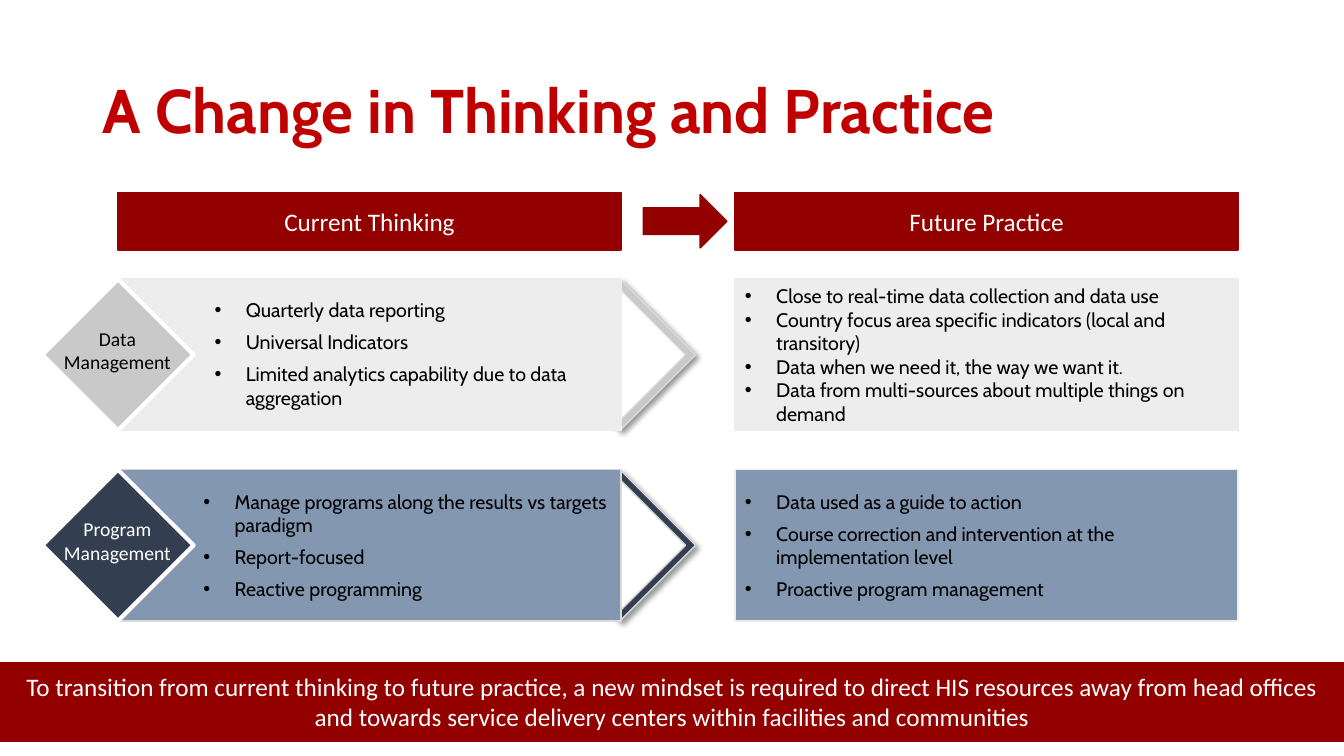
from lxml import etree
from pptx import Presentation
from pptx.dml.color import RGBColor
from pptx.enum.shapes import MSO_SHAPE as Kind
from pptx.enum.text import MSO_ANCHOR as Anchor, PP_ALIGN as Align
from pptx.oxml import parse_xml
from pptx.oxml.ns import nsdecls, qn
from pptx.util import Inches, Pt

RED = RGBColor(0xC0, 0x00, 0x00)
MAROON = RGBColor(0x92, 0x00, 0x00)
WHITE = RGBColor(0xFF, 0xFF, 0xFF)
BLACK = RGBColor(0x00, 0x00, 0x00)
PALE = RGBColor(0xED, 0xED, 0xED)
SILVER = RGBColor(0xC9, 0xC9, 0xC9)
EDGE = RGBColor(0xD9, 0xD9, 0xD9)
NAVY = RGBColor(0x33, 0x3F, 0x50)
STEEL = RGBColor(0x84, 0x97, 0xB0)

SHADOW = (f'<a:effectLst {nsdecls("a")}><a:outerShdw blurRad="{Pt(4)}" dist="{Pt(3)}" '
          'dir="2700000" algn="tl" rotWithShape="0"><a:srgbClr val="000000">'
          '<a:alpha val="40000"/></a:srgbClr></a:outerShdw></a:effectLst>')

# Grid: two columns and two rows of cards
LEFT, RIGHT, WIDE = 1.17, 7.29, 4.99
TOP, STEP, TALL = 2.77, 1.89, 1.5
HEAD, HEAD_H = 1.91, 0.57
TAG, TIP, INSET = LEFT - TALL / 2, 5.4, 0.1

deck = Presentation()
deck.slide_width, deck.slide_height = Inches(13.33), Inches(7.5)
slide = deck.slides.add_slide(deck.slide_layouts[5])


def draw(kind, box, fill, edge, weight=1):
    shape = slide.shapes.add_shape(kind, *map(Inches, box))
    shape.shadow.inherit = False
    shape.fill.solid()
    shape.fill.fore_color.rgb = fill
    shape.line.color.rgb = edge
    shape.line.width = Pt(weight)
    return shape


def write(shape, text, font, size, color, gap=None, wrap=True):
    """Centre the text, or set it as bullets when a gap is given."""
    frame = shape.text_frame
    frame.text = text
    frame.word_wrap = wrap
    for para in frame.paragraphs:
        para.font.name, para.font.size = font, Pt(size)
        para.font.color.rgb = color
        para.alignment = Align.CENTER if gap is None else Align.LEFT
        if gap is not None:
            para.space_before = Pt(gap)
            props = para._p.get_or_add_pPr()
            props.set("marL", str(Inches(0.31)))
            props.set("indent", str(Inches(-0.31)))
            mark = parse_xml(f'<a:buChar {nsdecls("a")} char="•"/>')
            face = parse_xml(f'<a:buFont {nsdecls("a")} typeface="Arial"/>')
            props.find(qn("a:defRPr")).addprevious(face)
            face.addnext(mark)
        for run in para.runs:
            run.font.name, run.font.size = font, Pt(size)
            run.font.color.rgb = color


# Title
title = slide.shapes.title
title.left, title.top, title.width, title.height = map(Inches, (0.92, 0.4, 11.5, 1.45))
write(title, "A Change in Thinking and Practice", "Cabin", 44, RED)
title.text_frame.vertical_anchor = Anchor.MIDDLE
para = title.text_frame.paragraphs[0]
para.alignment, para.line_spacing = Align.LEFT, 0.9
para.runs[0].font.bold = True

# Column heads, arrow between them, and closing banner
bars = [
    ((LEFT, HEAD, WIDE, HEAD_H), "Current Thinking"),
    ((RIGHT, HEAD, WIDE, HEAD_H), "Future Practice"),
    ((0, 6.57, 13.33, 0.78),
     "To transition from current thinking to future practice, a new mindset is "
     "required to direct HIS resources away from head offices and towards "
     "service delivery centers within facilities and communities"),
]
for box, text in bars:
    bar = draw(Kind.RECTANGLE, box, MAROON, MAROON)
    write(bar, text, "Calibri", 18, WHITE)
    bar.text_frame.vertical_anchor = Anchor.MIDDLE
draw(Kind.RIGHT_ARROW, (6.38, 1.93, 0.83, 0.53), MAROON, MAROON)

# Rows: label, label colour, dark fill, card fill, left edge,
# then left, top inset, width, paragraph gap and bullets of each list
rows = [
    ("Data\nManagement", BLACK, SILVER, PALE, PALE, [
        (2.03, 0.14, 3.99, 6, ["Quarterly data reporting", "Universal Indicators",
                               "Limited analytics capability due to data aggregation"]),
        (RIGHT, 0, WIDE, 0, ["Close to real-time data collection and data use",
                             "Country focus area specific indicators (local and transitory)",
                             "Data when we need it, the way we want it.",
                             "Data from multi-sources about multiple things on demand"])]),
    ("Program\nManagement", WHITE, NAVY, STEEL, EDGE, [
        (1.92, 0.15, 4.24, 6, ["Manage programs along the results vs targets paradigm",
                               "Report-focused", "Reactive programming"]),
        (RIGHT, 0.15, WIDE, 6, ["Data used as a guide to action",
                                "Course correction and intervention at the implementation level",
                                "Proactive program management"])]),
]
for i, (label, ink, dark, light, edge, lists) in enumerate(rows):
    top = TOP + i * STEP

    # Hollow tip behind the left card
    tip = draw(Kind.DIAMOND, (TIP, top, TALL, TALL), dark, EDGE)
    props = tip._element.spPr
    props.replace(props.find(qn("a:effectLst")), etree.fromstring(SHADOW))
    hole = TALL - 2 * INSET
    draw(Kind.DIAMOND, (TIP + INSET, top + INSET, hole, hole), WHITE, EDGE)

    # Cards and row tag
    draw(Kind.RECTANGLE, (LEFT, top, WIDE, TALL), light, edge)
    draw(Kind.RECTANGLE, (RIGHT, top, WIDE, TALL), light, PALE)
    draw(Kind.DIAMOND, (TAG, top, TALL, TALL), dark, WHITE, 3)
    tag = slide.shapes.add_textbox(*map(Inches, (LEFT - 0.64, top + 0.42, 1.27, 0.57)))
    write(tag, label, "Calibri", 14, ink, wrap=False)

    # Bullet lists
    for left, drop, wide, gap, items in lists:
        box = (left, top + drop, wide, TALL - 2 * drop)
        note = slide.shapes.add_textbox(*map(Inches, box))
        write(note, "\n".join(items), "Cabin", 14, BLACK, gap)

deck.save("out.pptx")
